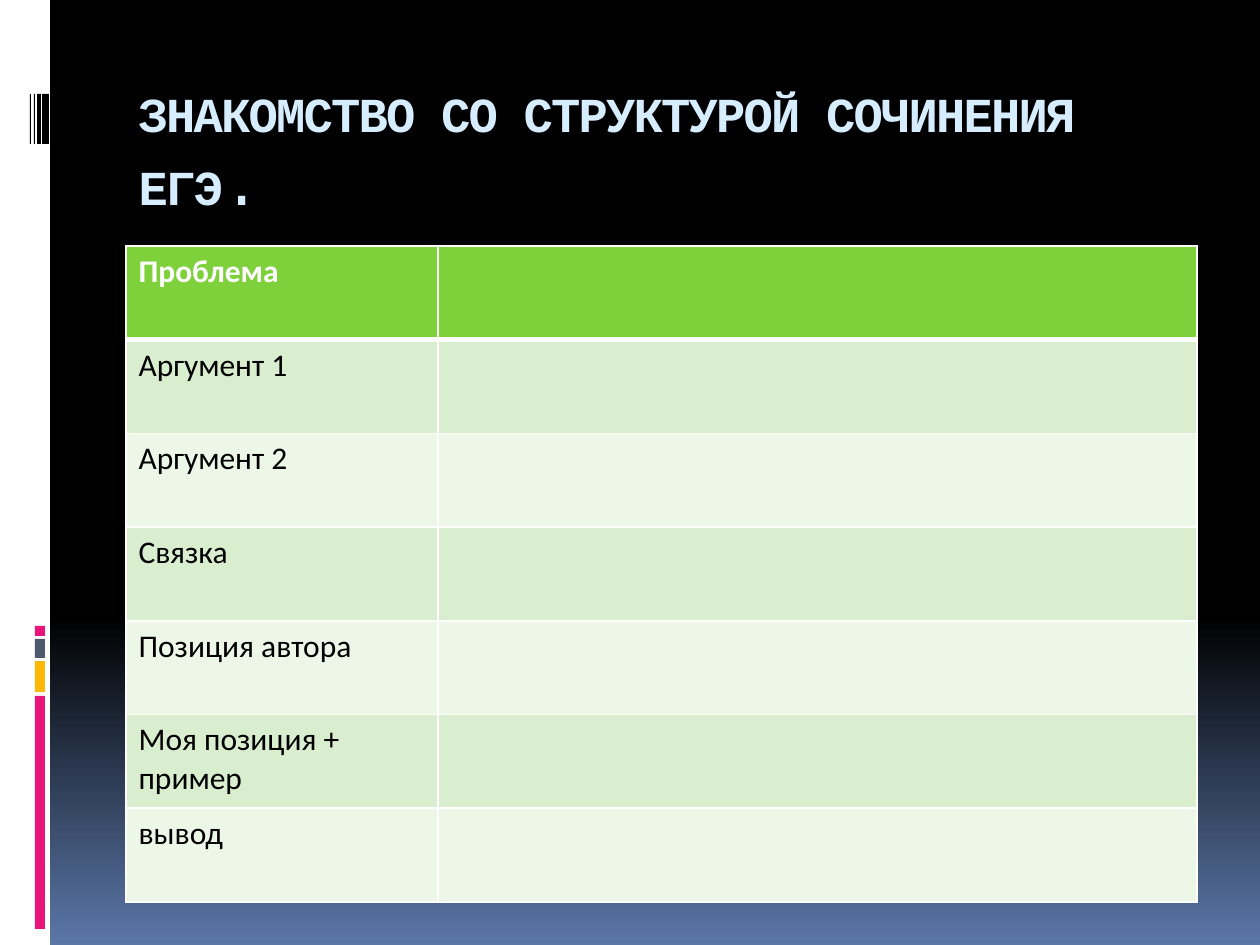
import pptx
import pptx.dml.color
import pptx.enum.shapes
import pptx.enum.text
import pptx.oxml
import pptx.oxml.ns
import pptx.util

RGBColor = pptx.dml.color.RGBColor
WHITE = RGBColor(0xFF, 0xFF, 0xFF)
BLACK = RGBColor(0x00, 0x00, 0x00)
BLUE = RGBColor(0x5B, 0x77, 0xA8)
PINK = RGBColor(0xEA, 0x15, 0x7A)
AMBER = RGBColor(0xFE, 0xB8, 0x0A)
SLATE = RGBColor(0x4E, 0x5B, 0x6F)
PALE_BLUE = RGBColor(0xD6, 0xEC, 0xFF)
GREEN = RGBColor(0x7F, 0xD1, 0x3B)
LIGHT_GREEN = RGBColor(0xD8, 0xEE, 0xCE)
PALE_GREEN = RGBColor(0xEC, 0xF7, 0xE8)

PX_PER_INCH = 126
SLIDE_WIDTH, SLIDE_HEIGHT = 1260, 945
ROW_LABELS = ["Проблема", "Аргумент 1", "Аргумент 2", "Связка",
              "Позиция автора", "Моя позиция + пример", "вывод"]


def px(length):
    return pptx.util.Emu(round(length * 914400 / PX_PER_INCH))


def add_background(slide):
    fill = slide.background.fill
    fill.gradient()
    fill.gradient_angle = 270
    for stop, position, color in zip(fill.gradient_stops, (0.65, 1), (BLACK, BLUE)):
        stop.position = position
        stop.color.rgb = color


def add_bar(slide, left, top, width, height, color):
    shape = slide.shapes.add_shape(
        pptx.enum.shapes.MSO_SHAPE.RECTANGLE, px(left), px(top), px(width), px(height))
    shape.shadow.inherit = False
    shape.fill.solid()
    shape.fill.fore_color.rgb = color
    shape.line.fill.background()


def add_side_strip(slide, left, top, width, height):
    add_bar(slide, left, top, width, height, WHITE)
    for offset, bar_height, color in [(696, 233, PINK), (661, 31, AMBER),
                                      (639, 19, SLATE), (626, 10, PINK)]:
        add_bar(slide, left + 35, top + offset, 10, bar_height, color)
    for offset, bar_width in [(42, 7), (37, 4), (34, 1), (30, 1)]:
        add_bar(slide, left + offset, top + 94, bar_width, 50, BLACK)


def set_title(slide, left, top, width, height):
    title = slide.shapes.title
    title.left, title.top, title.width, title.height = map(px, (left, top, width, height))
    frame = title.text_frame
    frame.word_wrap = True
    frame.auto_size = pptx.enum.text.MSO_AUTO_SIZE.NONE
    frame.vertical_anchor = pptx.enum.text.MSO_ANCHOR.TOP
    frame.margin_top = px(13)
    paragraph = frame.paragraphs[0]
    paragraph.alignment = pptx.enum.text.PP_ALIGN.LEFT
    for text, size, bold in [("ЗНАКОМСТВО СО СТРУКТУРОЙ СОЧИНЕНИЯ ЕГЭ", 27.9, True),
                             (".", 36, False)]:
        run = paragraph.add_run()
        run.text = text
        run.font.name = "Courier New"
        run.font.size = pptx.util.Pt(size)
        run.font.bold = bold
        run.font.color.rgb = PALE_BLUE
        run.font._element.set("spc", "-100")


def set_borders(cell, bottom_width, top_width):
    """Draw white cell borders; widths are in points."""
    properties = cell._tc.get_or_add_tcPr()
    sides = [("lnL", 1), ("lnR", 1), ("lnT", top_width), ("lnB", bottom_width)]
    for index, (side, width) in enumerate(sides):
        border = pptx.oxml.parse_xml(
            f'<a:{side} {pptx.oxml.ns.nsdecls("a")} w="{pptx.util.Pt(width)}">'
            f'<a:solidFill><a:srgbClr val="{WHITE}"/></a:solidFill></a:{side}>')
        properties.insert(index, border)


def add_structure_table(slide, left, top, width, height):
    row_count = len(ROW_LABELS)
    table = slide.shapes.add_table(
        row_count, 2, px(left), px(top), px(width), px(height)).table
    label_width = 312
    table.columns[0].width = px(label_width)
    table.columns[1].width = px(width - label_width)
    for index, label in enumerate(ROW_LABELS):
        is_header = index == 0
        table.rows[index].height = px(height / row_count)
        fill_color = GREEN if is_header else (PALE_GREEN, LIGHT_GREEN)[index % 2]
        for cell in table.rows[index].cells:
            cell.fill.solid()
            cell.fill.fore_color.rgb = fill_color
            set_borders(cell, 3 if is_header else 1, 3 if index == 1 else 1)
        label_cell = table.cell(index, 0)
        label_cell.text_frame.text = label
        font = label_cell.text_frame.paragraphs[0].runs[0].font
        font.name = "Calibri"
        font.size = pptx.util.Pt(18)
        font.bold = is_header
        font.color.rgb = WHITE if is_header else BLACK


def main():
    presentation = pptx.Presentation()
    presentation.slide_width = px(SLIDE_WIDTH)
    presentation.slide_height = px(SLIDE_HEIGHT)
    slide = presentation.slides.add_slide(presentation.slide_layouts.get_by_name("Title Only"))
    add_background(slide)
    add_side_strip(slide, 0, 0, 50, SLIDE_HEIGHT)
    set_title(slide, 126, 71, 1071, 126)
    add_structure_table(slide, 126, 246, 1071, 656)
    presentation.save("out.pptx")


if __name__ == "__main__":
    main()
